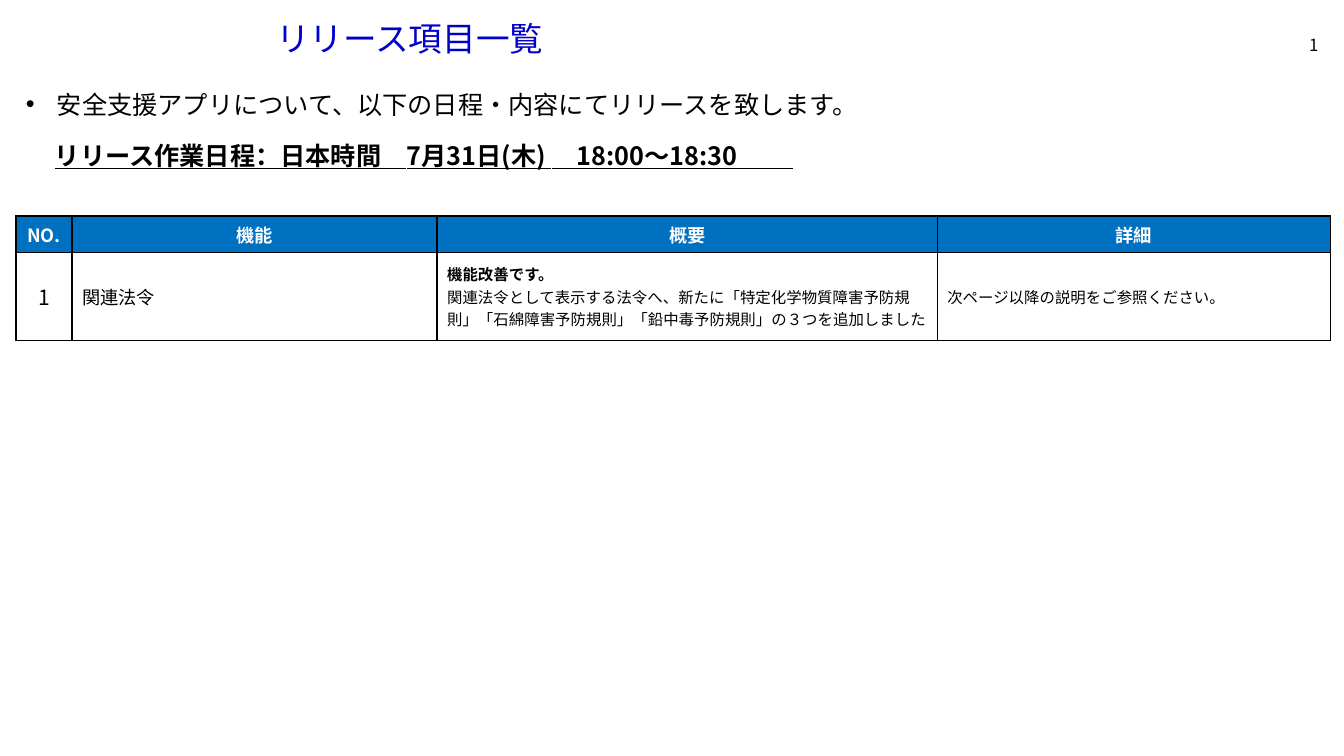
"""Build the release item list slide."""
from dataclasses import dataclass

from lxml import etree
from pptx import Presentation, util as u
from pptx.dml.color import RGBColor
from pptx.enum import text
from pptx.oxml.ns import qn

TITLE = "リリース項目一覧"
PAGE = "1"
NOTICE = "安全支援アプリについて、以下の日程・内容にてリリースを致します。"
SCHEDULE = "リリース作業日程：日本時間　7月31日(木) 　18:00～18:30　 　"
HEADINGS = ["NO.", "機能", "概要", "詳細"]
ITEM = [
    ["1"],
    ["関連法令"],
    [
        "機能改善です。",
        "関連法令として表示する法令へ、新たに「特定化学物質障害予防規則」"
        "「石綿障害予防規則」「鉛中毒予防規則」の３つを追加しました",
    ],
    ["次ページ以降の説明をご参照ください。"],
]
COLUMN_WIDTHS = [56, 365, 500, 393]
ROW_HEIGHTS = [32, 88]
ITEM_SIZES = [15, 13, 11, 11]


@dataclass(frozen=True)
class Theme:
    """Colours, font and type sizes."""
    font: str = "Noto Sans CJK JP"
    title: str = "0000CA"
    ink: str = "000000"
    paper: str = "FFFFFF"
    header: str = "0070C0"
    title_size: int = 24
    body_size: int = 18
    header_size: int = 13
    page_size: int = 12


THEME = Theme()
ALIGN = text.PP_ALIGN


def px(length):
    """Turn slide pixels into EMU."""
    return u.Emu(round(length * 914400 / 100.8))


def write(paragraph, words, size, color=THEME.ink, bold=False, align=ALIGN.LEFT):
    """Add one formatted run to a paragraph."""
    paragraph.alignment = align
    run = paragraph.add_run()
    run.text = words
    run.font.size = u.Pt(size)
    run.font.bold = bold
    run.font.name = THEME.font
    run.font.color.rgb = RGBColor.from_string(color)
    etree.SubElement(run.font._element, qn("a:ea"), typeface=THEME.font)
    return run


def place(shape, left, top, width, height):
    """Position a text shape and return its first paragraph."""
    shape.left, shape.top, shape.width, shape.height = map(px, (left, top, width, height))
    frame = shape.text_frame
    frame.word_wrap = True
    frame.auto_size = text.MSO_AUTO_SIZE.NONE
    frame.vertical_anchor = text.MSO_ANCHOR.MIDDLE
    return frame.paragraphs[0]


def add_text(slide, *box):
    """Add a text box and return its first paragraph."""
    return place(slide.shapes.add_textbox(0, 0, 0, 0), *box)


def dress(cell, fill):
    """Give a cell its borders, fill and anchor."""
    properties = cell._tc.get_or_add_tcPr()
    for side in ("lnL", "lnR", "lnT", "lnB"):
        line = etree.SubElement(properties, qn(f"a:{side}"), w=str(u.Pt(1)))
        solid = etree.SubElement(line, qn("a:solidFill"))
        etree.SubElement(solid, qn("a:srgbClr"), val=THEME.ink)
    cell.fill.solid()
    cell.fill.fore_color.rgb = RGBColor.from_string(fill)
    cell.vertical_anchor = text.MSO_ANCHOR.MIDDLE


def add_release_table(slide):
    """Add the table of release items."""
    releases = slide.shapes.add_table(
        len(ROW_HEIGHTS), len(COLUMN_WIDTHS), px(16), px(216),
        px(sum(COLUMN_WIDTHS)), px(sum(ROW_HEIGHTS))).table
    for row, height in zip(releases.rows, ROW_HEIGHTS):
        row.height = px(height)
    for index, width in enumerate(COLUMN_WIDTHS):
        releases.columns[index].width = px(width)
        heading, detail = releases.cell(0, index), releases.cell(1, index)
        dress(heading, THEME.header)
        write(heading.text_frame.paragraphs[0], HEADINGS[index],
              THEME.header_size, THEME.paper, True, ALIGN.CENTER)
        dress(detail, THEME.paper)
        frame = detail.text_frame
        lines = ITEM[index]
        for number, words in enumerate(lines):
            paragraph = frame.add_paragraph() if number else frame.paragraphs[0]
            write(paragraph, words, ITEM_SIZES[index],
                  bold=number < len(lines) - 1,
                  align=ALIGN.LEFT if index else ALIGN.CENTER)


def main():
    """Build and save the slide."""
    deck = Presentation()
    deck.slide_width, deck.slide_height = u.Inches(13.33), u.Inches(7.5)
    slide = deck.slides.add_slide(deck.slide_layouts[5])

    title = place(slide.shapes.title, 266, 20, 963, 42)
    title.line_spacing = 0.9
    write(title, TITLE, THEME.title_size, THEME.title)

    page = write(add_text(slide, 1258, 30, 70, 30), PAGE, THEME.page_size, align=ALIGN.RIGHT)
    page._r.tag = qn("a:fld")
    page._r.set("id", "{B6F15528-21DE-4FAA-801E-634DDDAF4B2B}")
    page._r.set("type", "slidenum")

    add_release_table(slide)

    notice = add_text(slide, 16, 84, 1298, 40)
    bullet = notice._p.get_or_add_pPr()
    bullet.set("marL", str(px(31)))
    bullet.set("indent", str(-px(31)))
    etree.SubElement(bullet, qn("a:buFont"), typeface="Arial")
    etree.SubElement(bullet, qn("a:buChar"), char="•")
    write(notice, NOTICE, THEME.body_size)

    schedule = add_text(slide, 45, 135, 862, 40)
    write(schedule, SCHEDULE, THEME.body_size, bold=True).font.underline = True

    deck.save("out.pptx")


if __name__ == "__main__":
    main()
